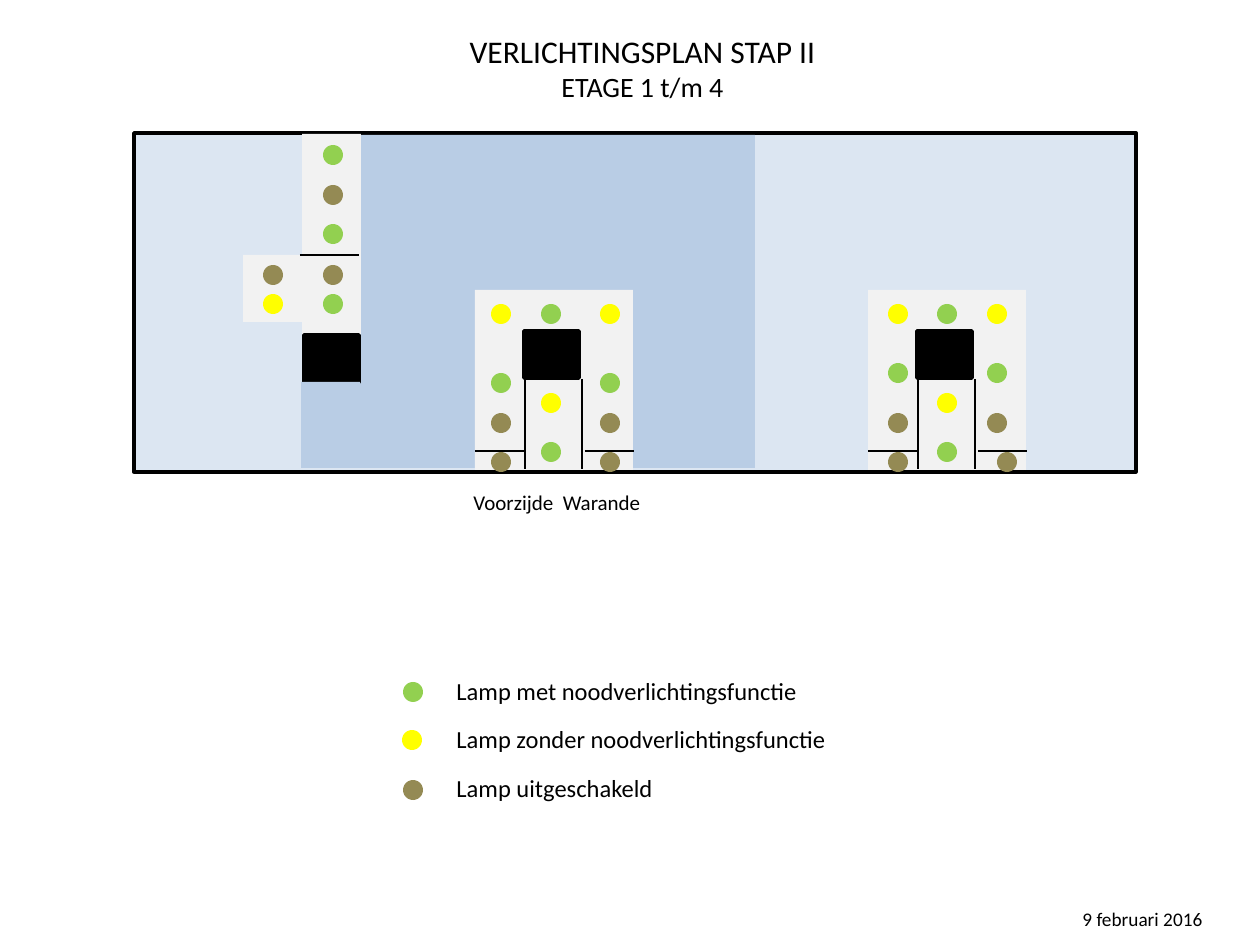
from lxml.etree import SubElement
from pptx import Presentation
from pptx.dml.color import RGBColor
from pptx.enum.shapes import MSO_CONNECTOR, MSO_SHAPE
from pptx.enum.text import MSO_AUTO_SIZE, PP_ALIGN
from pptx.oxml.ns import qn
from pptx.util import Emu, Pt

PX = 914400 / 126
LAMP_SIZE = 20
COLORS = {
    "building": "DCE6F2",
    "zone": "B9CDE5",
    "floor": "F2F2F2",
    "black": "000000",
    "emergency": "92D050",
    "normal": "FFFF00",
    "off": "948A54",
}

# Lamps: left edge of each column, with (top, kind) down the column
LAMPS = {
    263: [(265, "off"), (294, "normal")],
    323: [(145, "emergency"), (185, "off"), (224, "emergency"),
          (265, "off"), (294, "emergency")],
    491: [(304, "normal"), (373, "emergency"), (413, "off"), (452, "off")],
    541: [(304, "emergency"), (393, "normal"), (442, "emergency")],
    600: [(304, "normal"), (373, "emergency"), (413, "off"), (452, "off")],
    888: [(304, "normal"), (363, "emergency"), (413, "off"), (452, "off")],
    937: [(304, "emergency"), (393, "normal"), (442, "emergency")],
    987: [(304, "normal"), (363, "emergency"), (413, "off")],
    997: [(452, "off")],
}

# Legend: lamp left, lamp top, label top, kind, label
LEGEND = [
    (403, 682, 670, "emergency", "Lamp met noodverlichtingsfunctie"),
    (402, 730, 718, "normal", "Lamp zonder noodverlichtingsfunctie"),
    (403, 780, 767, "off", "Lamp uitgeschakeld"),
]


def px(*lengths):
    return [Emu(round(length * PX)) for length in lengths]


def color(name):
    return RGBColor.from_string(COLORS[name])


def add_block(shapes, left, top, width, height, fill, outlined=False,
              kind=MSO_SHAPE.RECTANGLE):
    block = shapes.add_shape(kind, *px(left, top, width, height))
    block.shadow.inherit = False
    block.fill.solid()
    block.fill.fore_color.rgb = color(fill)
    if outlined:
        block.line.color.rgb = color("black")
        block.line.width = Pt(2)
    else:
        block.line.fill.background()


def add_lamp(shapes, left, top, kind):
    add_block(shapes, left, top, LAMP_SIZE, LAMP_SIZE, kind, kind=MSO_SHAPE.OVAL)


def add_wall(shapes, x1, y1, x2, y2):
    wall = shapes.add_connector(MSO_CONNECTOR.STRAIGHT, *px(x1, y1, x2, y2))
    wall.line.color.rgb = color("black")
    wall.line.width = Pt(0.75)
    SubElement(wall._element.spPr, qn("a:effectLst"))


def add_text(shapes, left, top, width, height, lines, align=PP_ALIGN.LEFT):
    box = shapes.add_textbox(*px(left, top, width, height))
    frame = box.text_frame
    frame.word_wrap = True
    frame.auto_size = MSO_AUTO_SIZE.SHAPE_TO_FIT_TEXT
    frame.text = "\n".join(text for text, size in lines)
    for para, (text, size) in zip(frame.paragraphs, lines):
        para.alignment = align
        for span in para.runs:
            span.font.name = "Calibri"
            span.font.size = Pt(size)
            span.font.color.rgb = color("black")


def add_entrance(shapes, left):
    """Front entrance: floor, lift core and the walls around it."""
    add_block(shapes, left, 290, 158, 180, "floor")
    add_block(shapes, left + 49, 331, 55, 47, "black", outlined=True)
    for x in (left + 50, left + 107):
        add_wall(shapes, x, 379, x, 469)
    for x in (left, left + 110):
        add_wall(shapes, x, 451, x + 49, 451)


def add_corridor(shapes):
    """Rear corridor with its side arm and lift core."""
    add_block(shapes, 243, 255, 69, 67, "floor")
    add_block(shapes, 302, 134, 59, 200, "floor")
    add_wall(shapes, 300, 255, 359, 255)
    add_block(shapes, 304, 335, 55, 47, "black", outlined=True)
    add_block(shapes, 301, 382, 59, 86, "zone")


def add_plan(page):
    shapes = page.shapes.add_group_shape().shapes
    add_block(shapes, 134, 133, 1002, 339, "building", outlined=True)
    add_block(shapes, 358, 135, 397, 333, "zone")
    add_corridor(shapes)
    for left in (475, 868):
        add_entrance(shapes, left)


def add_legend(page):
    shapes = page.shapes.add_group_shape().shapes
    for left, top, label_top, kind, label in LEGEND:
        add_lamp(shapes, left, top, kind)
        add_text(shapes, 444, label_top, 423, 43, [(label, 14)])


def main():
    deck = Presentation()
    deck.slide_width, deck.slide_height = px(1260, 945)
    page = deck.slides.add_slide(deck.slide_layouts[6])

    # Floor plan
    add_plan(page)

    # Title, legend, caption and date
    add_text(page.shapes, 392, 26, 501, 84,
             [("VERLICHTINGSPLAN STAP II", 18), ("ETAGE 1 t/m 4", 16)],
             PP_ALIGN.CENTER)
    add_legend(page)
    add_text(page.shapes, 461, 483, 287, 38, [("Voorzijde  Warande", 12)])
    add_text(page.shapes, 1070, 901, 344, 37, [("9 februari 2016", 11)])

    # Lamps
    for left, column in LAMPS.items():
        for top, kind in column:
            add_lamp(page.shapes, left, top, kind)

    deck.save("out.pptx")


if __name__ == "__main__":
    main()
